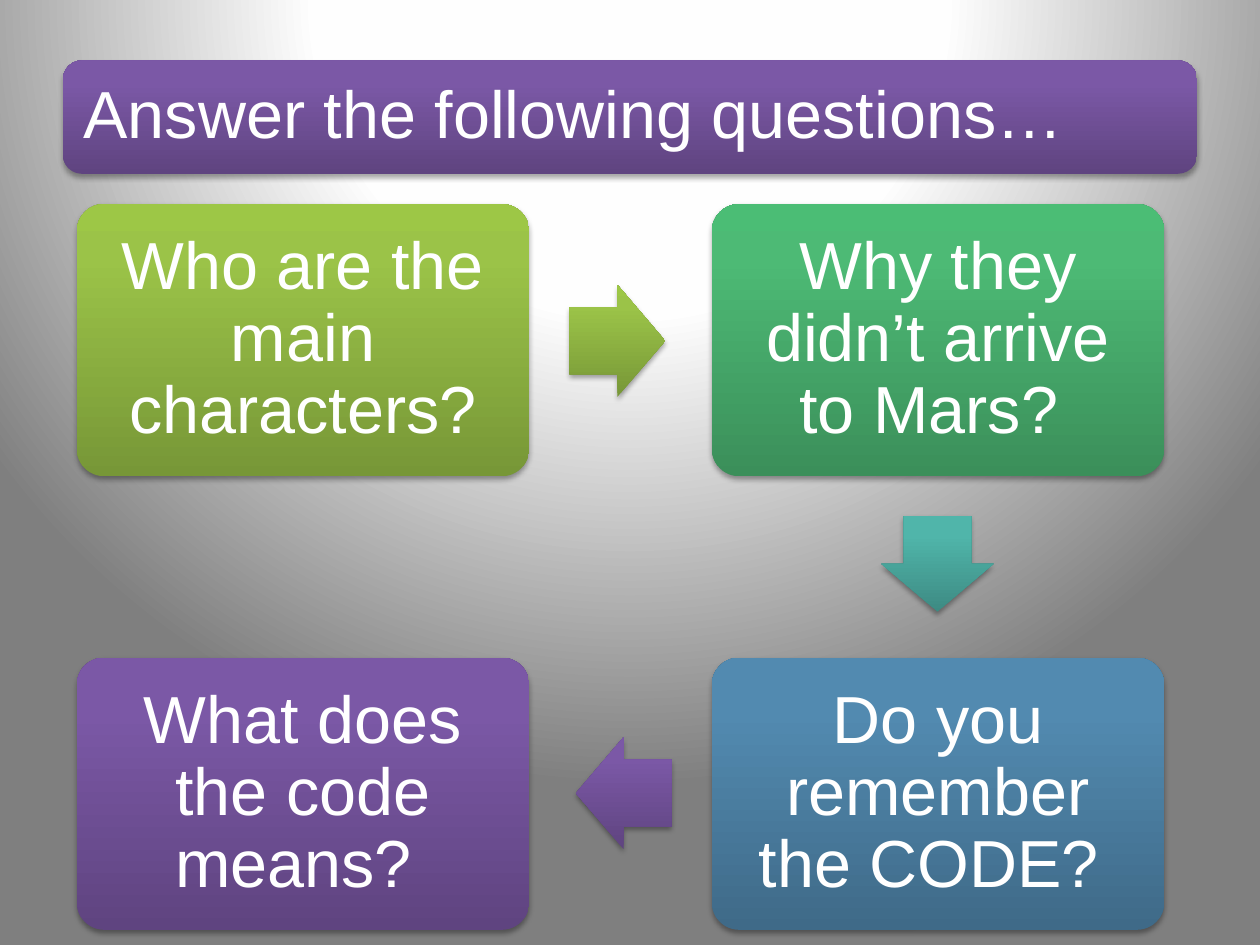
from dataclasses import dataclass

from lxml import etree
from pptx import Presentation
from pptx.dml.color import RGBColor
from pptx.enum.shapes import MSO_SHAPE
from pptx.enum.text import MSO_ANCHOR, PP_ALIGN
from pptx.oxml import parse_xml
from pptx.oxml.ns import nsdecls, qn
from pptx.util import Inches, Pt

ROUNDED = MSO_SHAPE.ROUNDED_RECTANGLE
ARROW = MSO_SHAPE.RIGHT_ARROW
LEFT, CENTER = PP_ALIGN.LEFT, PP_ALIGN.CENTER
MIDDLE = MSO_ANCHOR.MIDDLE

# Gradient stops run from the bottom edge to the top edge
STOPS = (0, 80, 100)
PURPLE = ("5F4480", "7B58A6", "7C57A8")
LIME = ("779737", "9BC348", "9DC746")
GREEN = ("3B8F5A", "4DBA75", "4BBD75")
TEAL = ("3D8B83", "50B5AA", "4EB8AC")
BLUE = ("3F6A88", "528AB0", "518BB3")
BOTTOM_TO_TOP = '<a:lin ang="16200000" scaled="0"/>'
SPOTLIGHT = ('<a:path path="circle">'
             '<a:fillToRect l="50000" t="-80000" r="50000" b="180000"/></a:path>')

# Two-by-two grid of question cards
GRID_LEFT, GRID_TOP = 0.61, 1.62
CARD_WIDTH, CARD_HEIGHT = 3.59, 2.16
COLUMN_STEP, ROW_STEP = 5.04, 3.6
CARD_CORNER, TITLE_CORNER = 0.1, 0.1667
ARROW_WIDTH, ARROW_HEIGHT = 0.76, 0.89
TEXT_MARGIN = 0.16


@dataclass
class Card:
    text: str
    column: int
    row: int
    colors: tuple


@dataclass
class Arrow:
    left: float
    top: float
    rotation: int
    colors: tuple


CARDS = [
    Card("Who are the main characters?", 0, 0, LIME),
    Card("Why they didn’t arrive to Mars? ", 1, 0, GREEN),
    Card("Do you remember the CODE? ", 1, 1, BLUE),
    Card("What does the code means? ", 0, 1, PURPLE),
]
ARROWS = [
    Arrow(4.52, 2.26, 0, LIME),
    Arrow(7.06, 4.03, 90, TEAL),
    Arrow(4.57, 5.85, 180, PURPLE),
]


def color(value: str) -> RGBColor:
    return RGBColor.from_string(value)


def gradient(colors: tuple, positions: tuple, direction: str):
    stops = "".join(
        f'<a:gs pos="{position * 1000}"><a:srgbClr val="{color(value)}"/></a:gs>'
        for position, value in zip(positions, colors))
    return parse_xml(f'<a:gradFill {nsdecls("a")} rotWithShape="0">'
                     f'<a:gsLst>{stops}</a:gsLst>{direction}</a:gradFill>')


def replace_solid_fill(parent, new_fill) -> None:
    parent.replace(parent.find(qn("a:solidFill")), new_fill)


def add_shadow(shape) -> None:
    shape.shadow.inherit = False
    effects = shape._element.spPr.find(qn("a:effectLst"))
    outer = etree.SubElement(
        effects, qn("a:outerShdw"), blurRad=str(Pt(3.1)), dist=str(Pt(1.8)),
        dir="5400000", rotWithShape="0")
    black = etree.SubElement(outer, qn("a:srgbClr"), val="000000")
    etree.SubElement(black, qn("a:alpha"), val="35000")


def add_block(slide, kind, left: float, top: float, width: float,
              height: float, adjustments: tuple, colors: tuple):
    shape = slide.shapes.add_shape(
        kind, Inches(left), Inches(top), Inches(width), Inches(height))
    for index, value in enumerate(adjustments):
        shape.adjustments[index] = value
    shape.fill.solid()
    replace_solid_fill(shape._element.spPr, gradient(colors, STOPS, BOTTOM_TO_TOP))
    shape.line.fill.background()
    add_shadow(shape)
    return shape


def add_panel(slide, text: str, left: float, top: float, width: float,
              height: float, corner: float, colors: tuple, alignment) -> None:
    shape = add_block(slide, ROUNDED, left, top, width, height, (corner,), colors)
    frame = shape.text_frame
    frame.word_wrap = True
    frame.vertical_anchor = MIDDLE
    # A rounded rectangle already insets its text by 0.29 of the corner radius
    margin = Inches(round(TEXT_MARGIN - 0.29 * corner * height, 2))
    frame.margin_left = frame.margin_right = margin
    frame.margin_top = frame.margin_bottom = margin
    paragraph = frame.paragraphs[0]
    paragraph.text = text
    paragraph.alignment = alignment
    paragraph.line_spacing = 0.9
    paragraph.font.name = "Arial"
    paragraph.font.size = Pt(38)
    paragraph.font.color.rgb = color("FFFFFF")


def add_card(slide, card: Card) -> None:
    add_panel(slide, card.text, GRID_LEFT + card.column * COLUMN_STEP,
              GRID_TOP + card.row * ROW_STEP, CARD_WIDTH, CARD_HEIGHT,
              CARD_CORNER, card.colors, CENTER)


def add_arrow(slide, arrow: Arrow) -> None:
    shape = add_block(slide, ARROW, arrow.left, arrow.top, ARROW_WIDTH,
                      ARROW_HEIGHT, (0.6, 0.5), arrow.colors)
    shape.rotation = arrow.rotation


def main() -> None:
    presentation = Presentation()
    presentation.slide_width = Inches(10)
    presentation.slide_height = Inches(7.5)
    slide = presentation.slides.add_slide(presentation.slide_layouts[6])

    # Background spotlight
    slide.background.fill.solid()
    background = slide._element.find(".//" + qn("p:bgPr"))
    replace_solid_fill(background, gradient(
        ("FFFFFF", "FEFEFE", "7F7F7F"), (0, 40, 100), SPOTLIGHT))

    # Title bar
    add_panel(slide, "Answer the following questions…", 0.5, 0.48, 9, 0.9,
              TITLE_CORNER, PURPLE, LEFT)

    # Question cycle
    for card in CARDS:
        add_card(slide, card)
    for arrow in ARROWS:
        add_arrow(slide, arrow)

    presentation.save("out.pptx")


if __name__ == "__main__":
    main()
